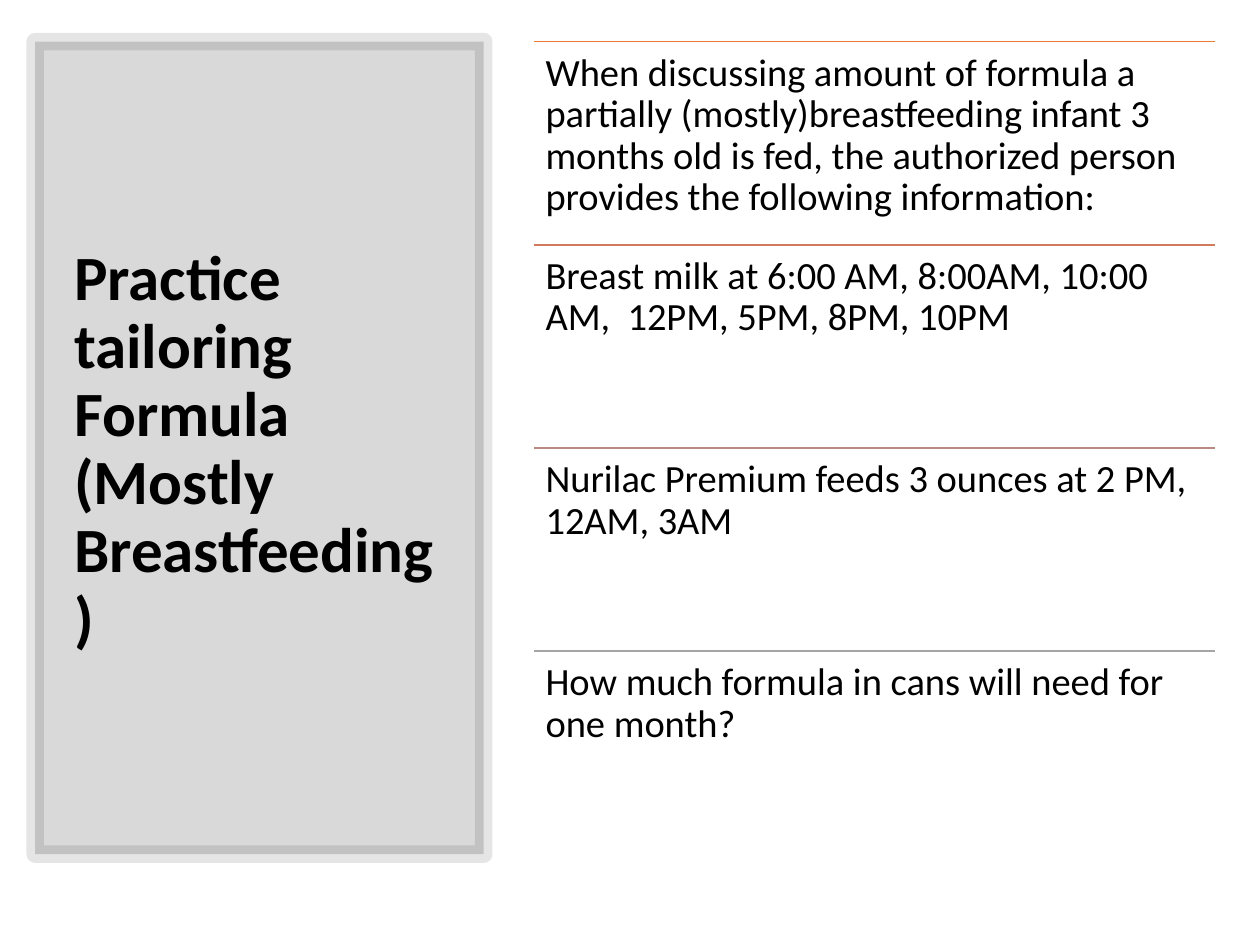
"""Build the slide on tailoring formula for a mostly breastfed infant."""
from lxml import etree
from pptx import Presentation
from pptx.dml.color import RGBColor
from pptx.enum.shapes import MSO_CONNECTOR, MSO_SHAPE
from pptx.enum.text import MSO_ANCHOR
from pptx.oxml.ns import qn
from pptx.util import Inches, Pt

RECTANGLE = MSO_SHAPE.RECTANGLE
STRAIGHT = MSO_CONNECTOR.STRAIGHT
MIDDLE = MSO_ANCHOR.MIDDLE
TOP = MSO_ANCHOR.TOP


def paint(color_format, color, opacity=100):
    color_format.solid()
    color_format.fore_color.rgb = RGBColor.from_string(color)
    if opacity < 100:
        rgb = color_format._xPr.find(qn("a:solidFill"))[0]
        etree.SubElement(rgb, qn("a:alpha"), val=str(opacity * 1000))


def add_text(left, top, width, height, text, size, bold, anchor):
    frame = slide.shapes.add_textbox(
        Inches(left), Inches(top), Inches(width), Inches(height)).text_frame
    frame.word_wrap = True
    frame.vertical_anchor = anchor
    frame.text = text
    paragraph = frame.paragraphs[0]
    paragraph.line_spacing = 0.9
    paragraph.font.name = "Calibri"
    paragraph.font.size = Pt(size)
    paragraph.font.bold = bold
    paint(paragraph.font.fill, "000000")
    return frame


presentation = Presentation()
presentation.slide_width = Inches(10)
presentation.slide_height = Inches(7.5)
slide = presentation.slides.add_slide(presentation.slide_layouts[6])

title_panel = slide.shapes.add_shape(
    RECTANGLE, Inches(0.28), Inches(0.33), Inches(3.56), Inches(6.45))
title_panel.shadow.inherit = False
paint(title_panel.fill, "000000", 15)
title_panel.line.width = Pt(10)
paint(title_panel.line.fill, "000000", 10)

add_text(0.49, 0.7, 3.12, 5.75,
         "Practice tailoring Formula \v(Mostly Breastfeeding)", 36, True, MIDDLE)

feeding_notes = [
    ("ED7D31", "When discussing amount of formula a partially (mostly)breastfeeding "
               "infant 3 months old is fed, the authorized person provides the "
               "following information:"),
    ("D17B5C", "Breast milk at 6:00 AM, 8:00AM, 10:00 AM,  12PM, 5PM, 8PM, 10PM"),
    ("B98A82", "Nurilac Premium feeds 3 ounces at 2 PM,  12AM, 3AM"),
    ("A5A5A5", "How much formula in cans will need for one month?"),
]
notes_left, notes_top, notes_width = 4.24, 0.33, 5.4
note_height = 6.45 / len(feeding_notes)

for index, (rule_color, note) in enumerate(feeding_notes):
    top = notes_top + index * note_height
    rule = slide.shapes.add_connector(
        STRAIGHT, Inches(notes_left), Inches(top),
        Inches(notes_left + notes_width), Inches(top))
    rule.line.width = Pt(1)
    paint(rule.line.fill, rule_color)
    etree.SubElement(rule._element.spPr, qn("a:effectLst"))

    note_frame = add_text(notes_left, top, notes_width, note_height,
                          note, 22, False, TOP)
    note_frame.margin_left = note_frame.margin_right = Inches(0.09)
    note_frame.margin_top = note_frame.margin_bottom = Inches(0.09)

presentation.save("out.pptx")
